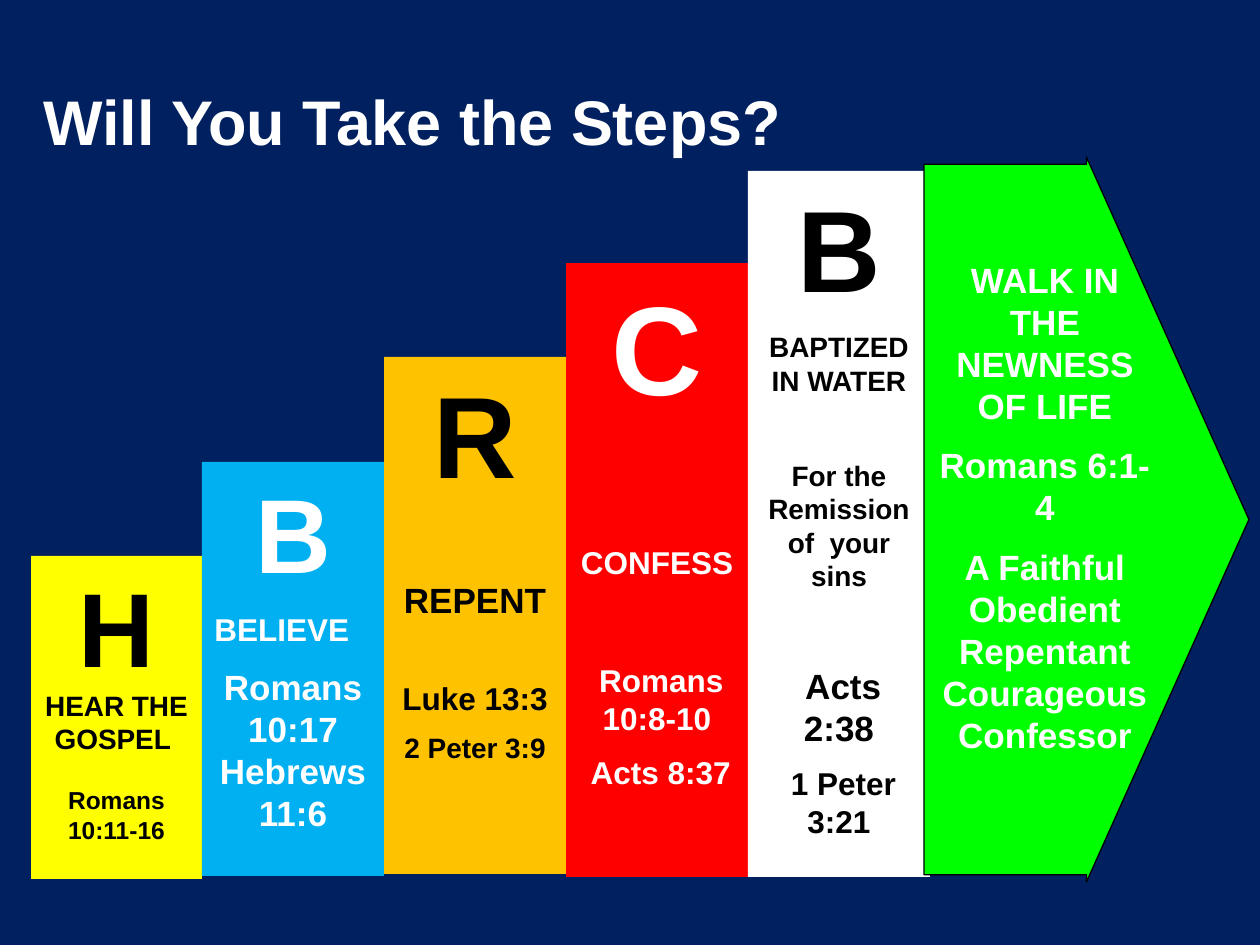
from pptx import Presentation
from pptx import util as u
from pptx.dml.color import RGBColor
from pptx.enum import shapes, text

PX = 914400 // 126
NAVY = RGBColor(0x00, 0x20, 0x60)
BLACK = RGBColor(0x00, 0x00, 0x00)
WHITE = RGBColor(0xFF, 0xFF, 0xFF)
YELLOW = RGBColor(0xFF, 0xFF, 0x00)
BLUE = RGBColor(0x00, 0xB0, 0xF0)
AMBER = RGBColor(0xFE, 0xC2, 0x00)
RED = RGBColor(0xFF, 0x00, 0x00)
GREEN = RGBColor(0x00, 0xFF, 0x00)
CENTER, LEFT = text.PP_ALIGN.CENTER, text.PP_ALIGN.LEFT

TITLE = "Will You Take the Steps?"
FIRST_LEFT = 31
# width, top, bottom, fill, text colour, lines of (text, size, space before[, alignment])
STEPS = [
    (171, 556, 879, YELLOW, BLACK, [
        ("H", 60, 0), ("HEAR THE GOSPEL ", 16, 0), ("Romans 10:11-16", 14, 17)]),
    (182, 462, 876, BLUE, WHITE, [
        ("B", 60, 0), ("BELIEVE", 18, 9, LEFT),
        ("Romans 10:17 Hebrews 11:6", 20, 10)]),
    (182, 357, 874, AMBER, BLACK, [
        ("R", 66, 0), ("REPENT", 20, 44), ("Luke 13:3", 18, 33),
        ("2 Peter 3:9", 16, 8)]),
    (182, 263, 877, RED, WHITE, [
        ("C", 72, 0), ("CONFESS", 18, 70), (" Romans 10:8-10", 18, 46),
        (" Acts 8:37", 18, 9)]),
    (182, 171, 877, WHITE, BLACK, [
        ("B", 66, 0), ("BAPTIZED IN WATER", 16, 8),
        ("For the Remission of  your sins", 16, 35), (" Acts 2:38", 20, 41),
        (" 1 Peter 3:21", 18, 9)]),
]
ARROW = (924, 157, 325, 725)
WALK_BOX = (924, 252, 242, 517)
WALK = [
    ("WALK IN THE NEWNESS OF LIFE", 20, 0),
    ("Romans 6:1- 4", 20, 10),
    ("A Faithful Obedient Repentant Courageous Confessor", 20, 10),
]


def px(*lengths):
    return [n * PX for n in lengths]


def write(tf, lines, color, anchor=text.MSO_ANCHOR.TOP):
    tf.word_wrap = True
    tf.auto_size = text.MSO_AUTO_SIZE.NONE
    tf.vertical_anchor = anchor
    for i, (words, size, before, *align) in enumerate(lines):
        p = tf.paragraphs[0] if i == 0 else tf.add_paragraph()
        p.alignment = align[0] if align else CENTER
        p.space_before = u.Pt(before)
        r = p.add_run()
        r.text = words
        r.font.name = "Arial"
        r.font.size = u.Pt(size)
        r.font.bold = True
        r.font.color.rgb = color


def add_filled(slide, kind, box, fill):
    sp = slide.shapes.add_shape(kind, *px(*box))
    sp.shadow.inherit = False
    sp.fill.solid()
    sp.fill.fore_color.rgb = fill
    sp.line.fill.background()
    return sp


def main():
    prs = Presentation()
    prs.slide_width, prs.slide_height = u.Inches(10), u.Inches(7.5)
    slide = prs.slides.add_slide(prs.slide_layouts[5])
    slide.background.fill.solid()
    slide.background.fill.fore_color.rgb = NAVY

    title = slide.shapes.title
    title.left, title.top, title.width, title.height = px(31, 53, 788, 135)
    write(title.text_frame, [(TITLE, 36, 0, LEFT)], WHITE, text.MSO_ANCHOR.MIDDLE)

    left = FIRST_LEFT
    for width, top, bottom, fill, color, lines in STEPS:
        step = add_filled(slide, shapes.MSO_SHAPE.RECTANGLE,
                          (left, top, width, bottom - top), fill)
        write(step.text_frame, lines, color)
        left += width

    arrow = add_filled(slide, shapes.MSO_SHAPE.RIGHT_ARROW, ARROW, GREEN)
    arrow.adjustments[0], arrow.adjustments[1] = 0.98, 0.5
    arrow.line.color.rgb = BLACK
    arrow.line.width = u.Pt(0.75)
    walk = slide.shapes.add_textbox(*px(*WALK_BOX))
    write(walk.text_frame, WALK, WHITE)

    prs.save("out.pptx")


if __name__ == "__main__":
    main()
